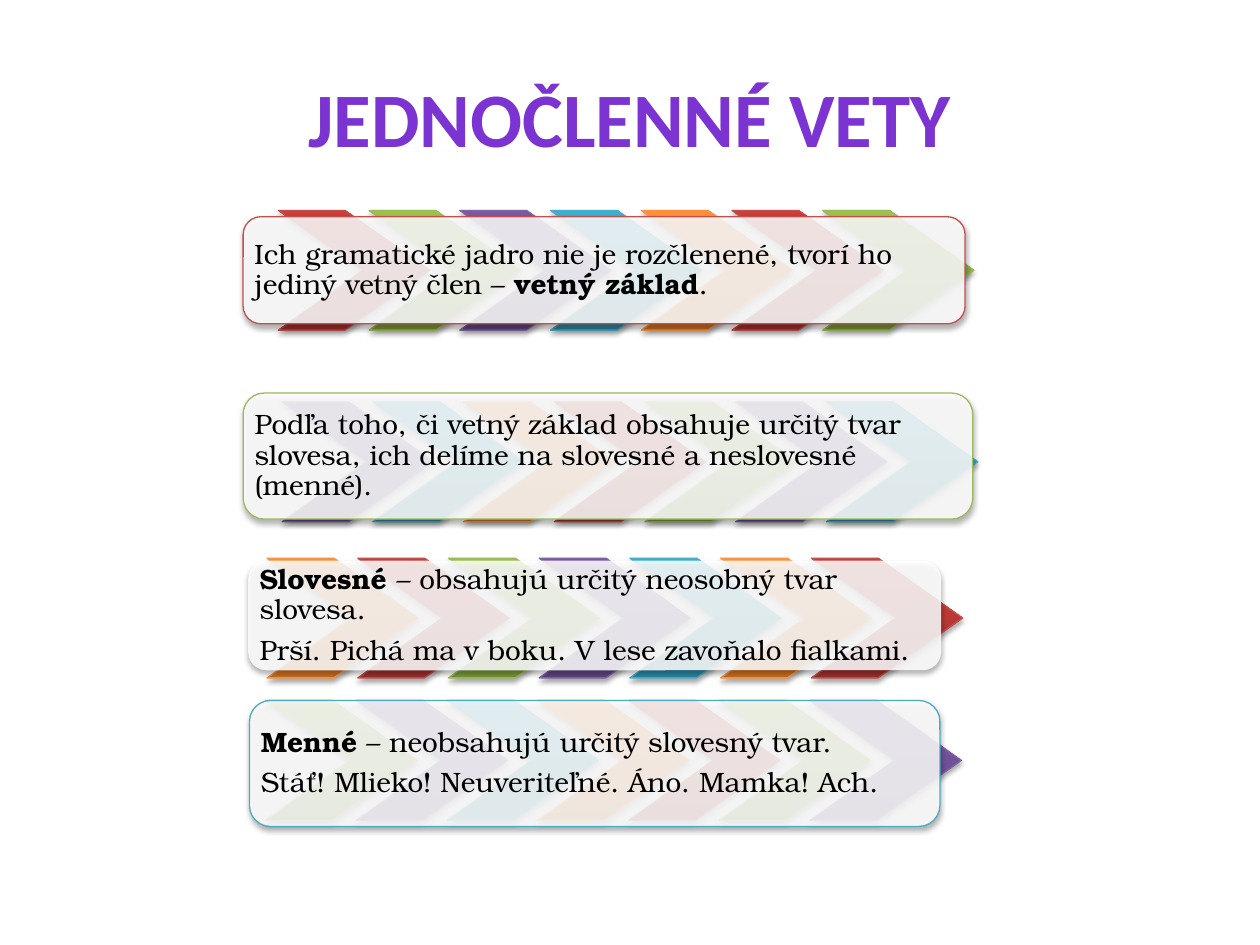
from itertools import cycle

from lxml import etree
from pptx import Presentation
from pptx.dml.color import RGBColor
from pptx.enum.shapes import MSO_SHAPE
from pptx.enum.text import MSO_ANCHOR, PP_ALIGN
from pptx.oxml.ns import qn
from pptx.util import Inches, Pt

CHEVRON, ROUNDED = MSO_SHAPE.CHEVRON, MSO_SHAPE.ROUNDED_RECTANGLE
MIDDLE = MSO_ANCHOR.MIDDLE
LEFT, CENTER = PP_ALIGN.LEFT, PP_ALIGN.CENTER


class Theme:
    title_font, title_size, title_color = "Calibri", 44, "7B34D2"
    body_font, body_size, body_color = "TeX Gyre Bonum", 16, "000000"
    card, card_opacity = "FFFFFF", 86
    red, green, teal = "C0504D", "9BBB59", "4BACC6"
    # Chevron colours in order: gradient bottom, gradient top, outline
    chevrons = [
        ("9C2F2D", "CB3E3A", red),
        ("779737", "9BC348", green),
        ("5F4480", "7B58A6", "8064A2"),
        ("2A88A2", "37B1D2", teal),
        ("CC6E20", "FF9034", "F79646"),
    ]


def add_text(shapes, paragraphs, at, font=Theme.body_font, size=Theme.body_size,
             color=Theme.body_color, align=LEFT, inset=0.04, spacing=0.9, after=6):
    """Each paragraph is a list of (text, bold) spans."""
    box = shapes.add_textbox(*map(Inches, at))
    frame = box.text_frame
    frame.word_wrap = True
    frame.vertical_anchor = MIDDLE
    frame.margin_left = frame.margin_right = Inches(inset)
    frame.margin_top = frame.margin_bottom = Inches(inset)
    for index, spans in enumerate(paragraphs):
        para = frame.add_paragraph() if index else frame.paragraphs[0]
        para.alignment = align
        para.line_spacing = spacing
        para.space_after = Pt(after)
        for text, bold in spans:
            span = para.add_run()
            span.text = text
            span.font.name = font
            span.font.size = Pt(size)
            span.font.bold = bold
            span.font.color.rgb = RGBColor.from_string(color)


def add_raised_shape(shapes, kind, at, outline):
    """Add a shape with a thin outline and a soft shadow below it."""
    shape = shapes.add_shape(kind, *map(Inches, at))
    if outline:
        shape.line.color.rgb = RGBColor.from_string(outline)
        shape.line.width = Pt(0.75)
    else:
        shape.line.fill.background()
    shape.shadow.inherit = False
    effects = shape._element.spPr.find(qn("a:effectLst"))
    shadow = etree.SubElement(effects, qn("a:outerShdw"), blurRad=str(Pt(3.1)),
                              dist=str(Pt(1.8)), dir="5400000", rotWithShape="0")
    tone = etree.SubElement(shadow, qn("a:srgbClr"), val="000000")
    etree.SubElement(tone, qn("a:alpha"), val="35000")
    return shape


deck = Presentation()
deck.slide_width, deck.slide_height = Inches(10), Inches(7.5)
page = deck.slides.add_slide(deck.slide_layouts[6])

# Title
add_text(page.shapes, [[("JEDNOČLENNÉ VETY", True)]], (0.5, 0.3, 9, 1.25),
         font=Theme.title_font, size=Theme.title_size, color=Theme.title_color,
         align=CENTER, spacing=1, after=0)

# Rows: left and top of the chevrons, card position, card outline, text
rows = [
    (2.21, 1.67, (1.93, 1.72, 5.73, 0.85), Theme.red, [
        [("Ich gramatické jadro nie je rozčlenené, tvorí ho jediný vetný člen – ", False),
         ("vetný základ", True), (".", False)]]),
    (2.24, 3.19, (1.93, 3.12, 5.79, 1), Theme.green, [
        [("Podľa toho, či vetný základ obsahuje určitý tvar slovesa, "
          "ich delíme na slovesné a neslovesné (menné).", False)]]),
    (2.12, 4.43, (1.97, 4.45, 5.5, 0.87), None, [
        [("Slovesné ", True), ("– obsahujú určitý neosobný tvar slovesa.", False)],
        [("Prší. Pichá ma v boku. V lese zavoňalo fialkami.", False)]]),
    (2.11, 5.56, (1.98, 5.56, 5.48, 1), Theme.teal, [
        [("Menné", True), (" – neobsahujú určitý slovesný tvar.", False)],
        [("Stáť! Mlieko! Neuveriteľné. Áno. Mamka! Ach.", False)]]),
]
CHEVRON_COUNT, CHEVRON_STEP = 7, 0.72
CARD_PADDING = 0.05
palette = cycle(Theme.chevrons)  # colours run on from one row to the next

for chevron_left, chevron_top, card_at, outline, paragraphs in rows:
    shapes = page.shapes.add_group_shape().shapes

    # Chevron band
    for index in range(CHEVRON_COUNT):
        dark, light, edge = next(palette)
        at = (chevron_left + index * CHEVRON_STEP, chevron_top, 1.2, 0.95)
        chevron = add_raised_shape(shapes, CHEVRON, at, edge)
        chevron.adjustments[0] = 0.706
        chevron.fill.gradient()
        chevron.fill.gradient_angle = 90
        for stop, color, position in zip(chevron.fill.gradient_stops, (dark, light), (0, 0.8)):
            stop.color.rgb = RGBColor.from_string(color)
            stop.position = position

    # Translucent card
    card = add_raised_shape(shapes, ROUNDED, card_at, outline)
    card.fill.solid()
    card.fill.fore_color.rgb = RGBColor.from_string(Theme.card)
    tone = card._element.spPr.find(qn("a:solidFill")).find(qn("a:srgbClr"))
    etree.SubElement(tone, qn("a:alpha"), val=str(Theme.card_opacity * 1000))

    # Card text
    left, top, width, height = card_at
    add_text(shapes, paragraphs, (left + CARD_PADDING, top + CARD_PADDING,
                                  width - 2 * CARD_PADDING, height - 2 * CARD_PADDING))

deck.save("out.pptx")
